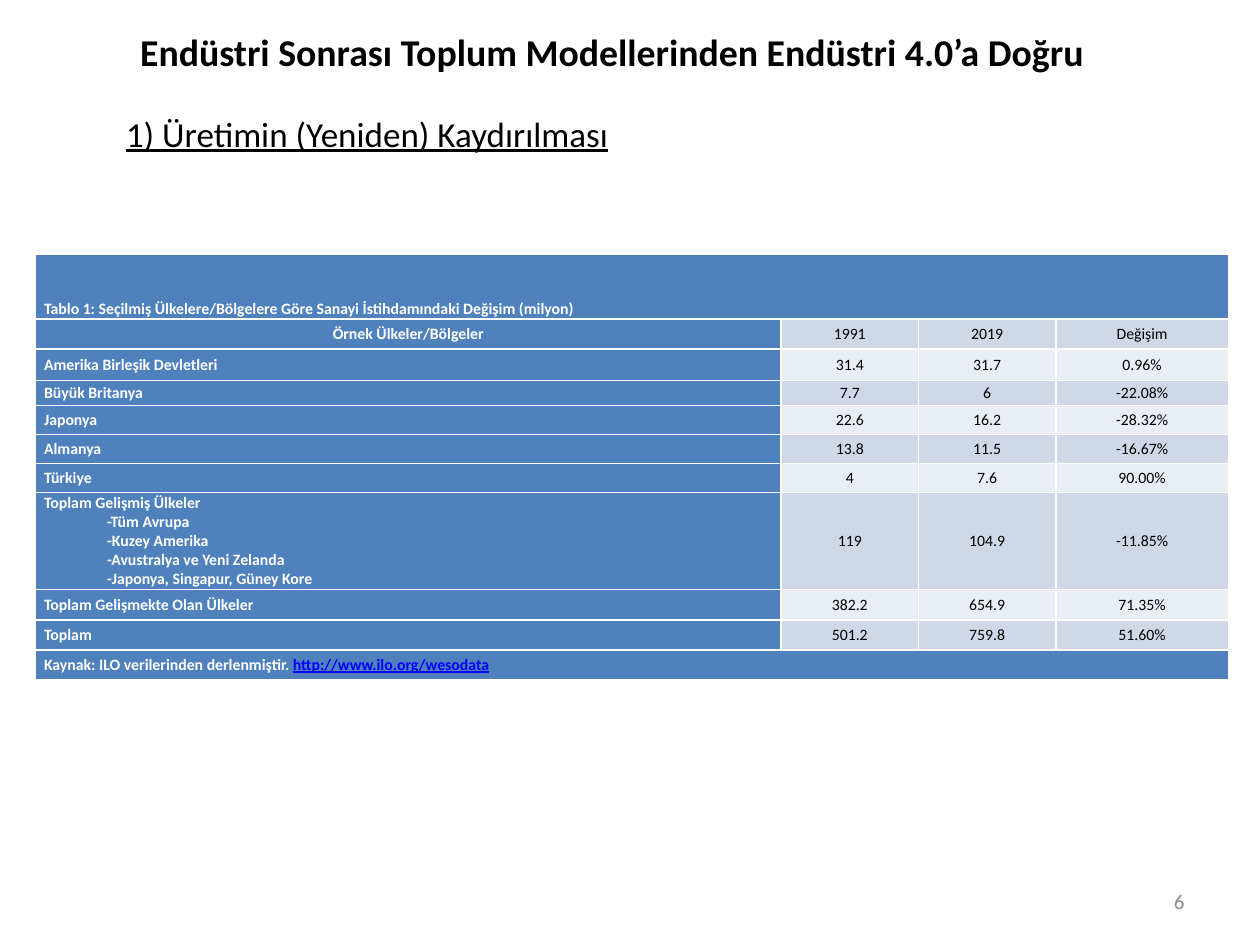
from pptx import Presentation
from pptx.dml.color import RGBColor
from pptx.enum.text import MSO_ANCHOR as Anchor, MSO_AUTO_SIZE as AutoSize, PP_ALIGN as Align
from pptx.util import Inches, Pt
from lxml.etree import SubElement
from pptx.oxml.ns import qn

BLACK = RGBColor(0x00, 0x00, 0x00)
WHITE = RGBColor(0xFF, 0xFF, 0xFF)
GREY = RGBColor(0x8C, 0x8C, 0x8C)
LINK_BLUE = RGBColor(0x00, 0x00, 0xFF)
HEADER_BLUE = RGBColor(0x4F, 0x81, 0xBD)
BAND_DARK = RGBColor(0xD0, 0xD8, 0xE8)
BAND_LIGHT = RGBColor(0xE9, 0xED, 0xF4)


def write(paragraph, text, size=9, color=WHITE, bold=False, underline=False, align=Align.LEFT):
    paragraph.alignment = align
    run = paragraph.add_run()
    run.text = text
    run.font.name = "Calibri"
    run.font.size = Pt(size)
    run.font.color.rgb = color
    run.font.bold = bold
    run.font.underline = underline


def place(shape, left, top, width, height, anchor):
    shape.left, shape.top = Inches(left), Inches(top)
    shape.width, shape.height = Inches(width), Inches(height)
    frame = shape.text_frame
    frame.word_wrap = True
    frame.auto_size = AutoSize.NONE
    frame.vertical_anchor = anchor
    return frame.paragraphs[0]


prs = Presentation()
prs.slide_width, prs.slide_height = Inches(10), Inches(7.5)
slide = prs.slides.add_slide(prs.slide_layouts[1])

heading = place(slide.shapes.title, 0.75, 0.29, 8.22, 0.24, Anchor.MIDDLE)
write(heading, "Endüstri Sonrası Toplum Modellerinden Endüstri 4.0’a Doğru",
      size=21.6, color=BLACK, bold=True, align=Align.CENTER)

subheading = place(slide.placeholders[1], 0.9, 0.84, 8.59, 4.57, Anchor.TOP)
subheading.space_before = Pt(0)
properties = subheading._p.get_or_add_pPr()
properties.set("marL", "0")
properties.set("indent", "0")
SubElement(properties, qn("a:buNone"))
write(subheading, "1) Üretimin (Yeniden) Kaydırılması", size=20, color=BLACK, underline=True)

number_box = slide.shapes.add_textbox(0, 0, 0, 0)
page_number = place(number_box, 7.17, 6.95, 2.33, 0.4, Anchor.MIDDLE)
write(page_number, "6", size=12, color=GREY, align=Align.RIGHT)

DEVELOPED = ["Toplam Gelişmiş Ülkeler", "-Tüm Avrupa", "-Kuzey Amerika",
             "-Avustralya ve Yeni Zelanda", "-Japonya, Singapur, Güney Kore"]
EMPLOYMENT = [
    (["Örnek Ülkeler/Bölgeler"], "1991", "2019", "Değişim"),
    (["Amerika Birleşik Devletleri"], "31.4", "31.7", "0.96%"),
    (["Büyük Britanya"], "7.7", "6", "-22.08%"),
    (["Japonya"], "22.6", "16.2", "-28.32%"),
    (["Almanya"], "13.8", "11.5", "-16.67%"),
    (["Türkiye"], "4", "7.6", "90.00%"),
    (DEVELOPED, "119", "104.9", "-11.85%"),
    (["Toplam Gelişmekte Olan Ülkeler"], "382.2", "654.9", "71.35%"),
    (["Toplam"], "501.2", "759.8", "51.60%"),
]
COLUMN_WIDTHS = [5.92, 1.09, 1.09, 1.37]
ROW_HEIGHTS = [0.51, 0.24, 0.25, 0.2, 0.23, 0.23, 0.23, 0.77, 0.24, 0.24, 0.24]

table = slide.shapes.add_table(len(ROW_HEIGHTS), len(COLUMN_WIDTHS), Inches(0.28), Inches(2.02),
                               Inches(sum(COLUMN_WIDTHS)), Inches(sum(ROW_HEIGHTS))).table
table.horz_banding = False
for column, width in zip(table.columns, COLUMN_WIDTHS):
    column.width = Inches(width)
for row, height in zip(table.rows, ROW_HEIGHTS):
    row.height = Inches(height)

for cell in table.iter_cells():
    cell.margin_left = cell.margin_right = Inches(0.07)
    cell.margin_top = cell.margin_bottom = 0
    cell.vertical_anchor = Anchor.MIDDLE
    cell.fill.solid()
    cell.fill.fore_color.rgb = HEADER_BLUE

last_row = len(ROW_HEIGHTS) - 1
for row_index in (0, last_row):
    table.cell(row_index, 0).merge(table.cell(row_index, 3))

caption = table.cell(0, 0)
caption.vertical_anchor = Anchor.BOTTOM
write(caption.text_frame.paragraphs[0],
      "Tablo 1: Seçilmiş Ülkelere/Bölgelere Göre Sanayi İstihdamındaki Değişim (milyon)", bold=True)

for row_index, (region_lines, *figures) in enumerate(EMPLOYMENT, start=1):
    region = table.cell(row_index, 0).text_frame
    for line_index, line in enumerate(region_lines):
        paragraph = region.add_paragraph() if line_index else region.paragraphs[0]
        if line_index:
            paragraph._p.get_or_add_pPr().set("marL", str(Inches(0.5)))
        write(paragraph, line, bold=True, align=Align.CENTER if row_index == 1 else Align.LEFT)
    for column_index, figure in enumerate(figures, start=1):
        cell = table.cell(row_index, column_index)
        cell.fill.fore_color.rgb = BAND_DARK if row_index % 2 else BAND_LIGHT
        write(cell.text_frame.paragraphs[0], figure, color=BLACK, align=Align.CENTER)

citation = table.cell(last_row, 0).text_frame.paragraphs[0]
write(citation, "Kaynak: ILO verilerinden derlenmiştir. ", bold=True)
write(citation, "http://www.ilo.org/wesodata", color=LINK_BLUE, bold=True, underline=True)

prs.save("out.pptx")
